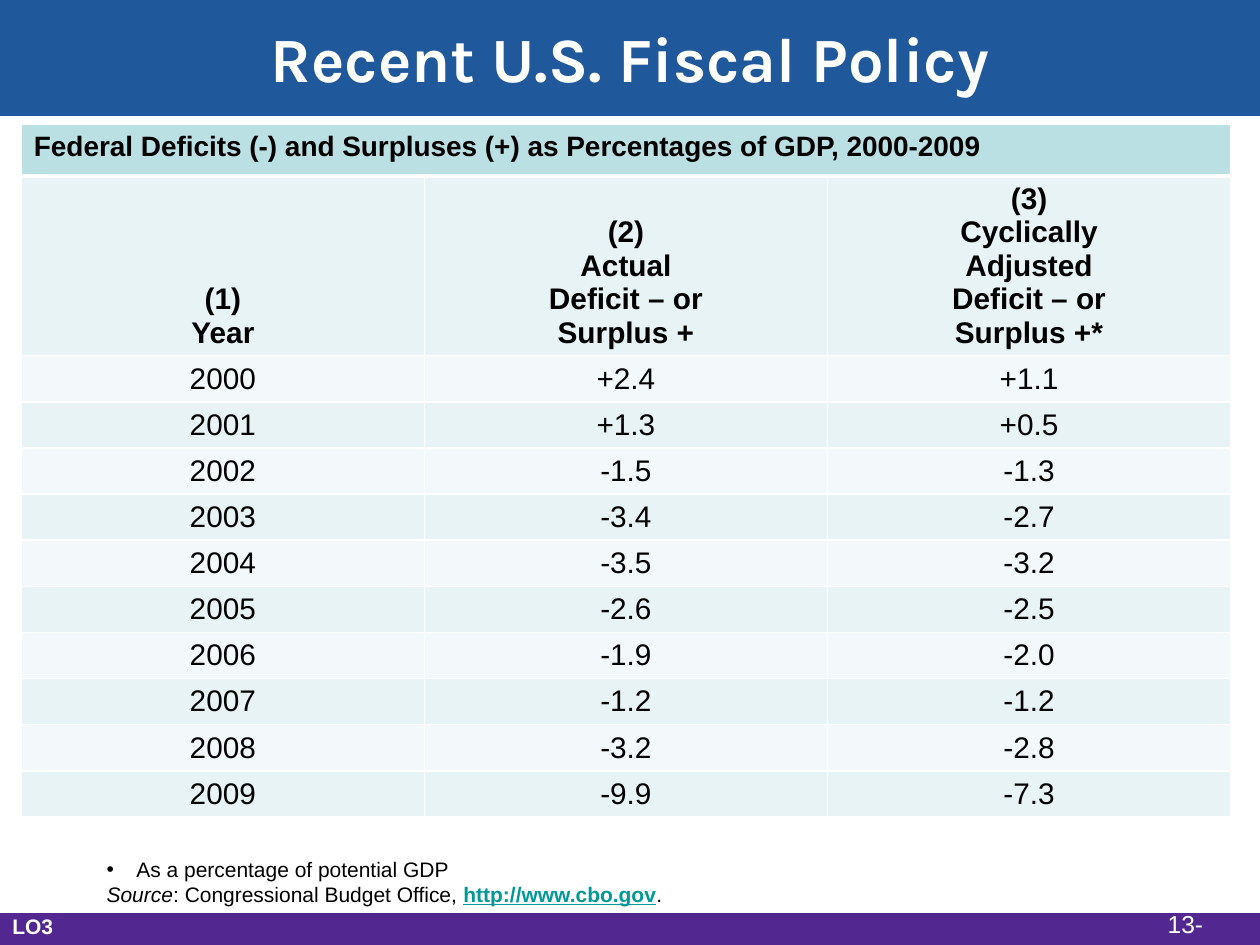
"""Build the slide on recent U.S. fiscal policy with its deficit table."""
import lxml.etree
import pptx
import pptx.dml.color
import pptx.enum.shapes
import pptx.enum.text
import pptx.oxml.ns
import pptx.util
from pptx.util import Cm

COLORS = {"blue": "20589C", "purple": "522890", "heading": "BBE0E3", "odd": "E7F3F4",
          "even": "F3F9FA", "black": "000000", "white": "FFFFFF", "link": "009999"}
ALIGN = pptx.enum.text.PP_ALIGN
ANCHOR = pptx.enum.text.MSO_ANCHOR

CAPTION = "Federal Deficits (-) and Surpluses (+) as Percentages of GDP, 2000-2009"
HEADERS = ["(1)\nYear", "(2)\nActual\nDeficit – or\nSurplus +",
           "(3)\nCyclically\nAdjusted\nDeficit – or\nSurplus +*"]
BALANCES = [("2000", "+2.4", "+1.1"), ("2001", "+1.3", "+0.5"), ("2002", "-1.5", "-1.3"),
            ("2003", "-3.4", "-2.7"), ("2004", "-3.5", "-3.2"), ("2005", "-2.6", "-2.5"),
            ("2006", "-1.9", "-2.0"), ("2007", "-1.2", "-1.2"), ("2008", "-3.2", "-2.8"),
            ("2009", "-9.9", "-7.3")]


def color(name):
    return pptx.dml.color.RGBColor.from_string(COLORS[name])


def add_element(parent, tag, **attributes):
    return lxml.etree.SubElement(parent, pptx.oxml.ns.qn(tag), **attributes)


def write(para, text, size=12, ink="black", font="Arial", bold=False, italic=False,
          underline=False, align=ALIGN.LEFT):
    para.alignment = align
    span = para.add_run()
    span.text = text
    span.font.size = pptx.util.Pt(size)
    span.font.name = font
    span.font.bold = bold
    span.font.italic = italic
    span.font.underline = underline
    span.font.color.rgb = color(ink)


def add_band(page, top, height, fill):
    band = page.shapes.add_shape(pptx.enum.shapes.MSO_SHAPE.RECTANGLE,
                                 0, top, Cm(25.4), height)
    band.shadow.inherit = False
    band.fill.solid()
    band.fill.fore_color.rgb = color(fill)
    band.line.color.rgb = color(fill)
    band.line.width = pptx.util.Pt(0.75)
    return band


def add_title(page, text):
    band = add_band(page, 0, Cm(2.33), "blue")
    title = page.shapes.title
    title.left, title.top, title.width, title.height = 0, 0, Cm(25.4), Cm(2.33)
    title.text_frame.vertical_anchor = ANCHOR.MIDDLE
    write(title.text_frame.paragraphs[0], text, size=36, ink="white", font="Karla",
          bold=True, align=ALIGN.CENTER)
    band.element.addnext(title.element)


def add_box(page, left, top, width, height):
    box = page.shapes.add_textbox(left, top, width, height)
    box.text_frame.word_wrap = True
    return box.text_frame


def set_borders(cell, **widths):
    properties = cell._tc.get_or_add_tcPr()
    for position, side in enumerate("LRTB"):
        width = pptx.util.Pt(widths.get(side, 1))
        line = lxml.etree.Element(pptx.oxml.ns.qn(f"a:ln{side}"), w=str(width))
        fill = add_element(line, "a:solidFill")
        add_element(fill, "a:srgbClr", val=COLORS["white"])
        properties.insert(position, line)


def format_cell(cell, fill, anchor=ANCHOR.TOP, **borders):
    cell.vertical_anchor = anchor
    cell.fill.solid()
    cell.fill.fore_color.rgb = color(fill)
    set_borders(cell, **borders)


def write_cell(cell, text, **style):
    frame = cell.text_frame
    for index, line in enumerate(text.split("\n")):
        para = frame.add_paragraph() if index else frame.paragraphs[0]
        write(para, line, size=17, align=ALIGN.CENTER, **style)


def add_balance_table(page):
    heights = [Cm(1.04), Cm(3.58)] + [Cm(0.93)] * len(BALANCES)
    table = page.shapes.add_table(len(heights), len(HEADERS), Cm(0.43), Cm(2.51),
                                  Cm(24.38), sum(heights)).table
    for row, height in zip(table.rows, heights):
        row.height = height
    table.cell(0, 0).merge(table.cell(0, 2))
    write(table.cell(0, 0).text_frame.paragraphs[0], CAPTION, size=16, bold=True)
    for column, header in enumerate(HEADERS):
        format_cell(table.cell(0, column), "heading", B=3)
        format_cell(table.cell(1, column), "odd", anchor=ANCHOR.BOTTOM, T=3)
        write_cell(table.cell(1, column), header, bold=True)
    for row, values in enumerate(BALANCES, start=2):
        for column, value in enumerate(values):
            format_cell(table.cell(row, column), "odd" if row % 2 else "even")
            write_cell(table.cell(row, column), value)


def add_source_notes(page):
    frame = add_box(page, Cm(1.9), Cm(17.14), Cm(15.75), Cm(1.27))
    bullet = frame.paragraphs[0]
    write(bullet, "As a percentage of potential GDP")
    properties = bullet._p.get_or_add_pPr()
    properties.set("marL", str(Cm(0.6)))
    properties.set("indent", str(-Cm(0.6)))
    add_element(properties, "a:buFont", typeface="Arial")
    add_element(properties, "a:buChar", char="•")
    source = frame.add_paragraph()
    write(source, "Source", italic=True)
    write(source, ": Congressional Budget Office, ")
    write(source, "http://www.cbo.gov", ink="link", bold=True, underline=True)
    write(source, ".")


def add_footer(page):
    add_band(page, Cm(18.41), Cm(0.64), "purple")
    objective = add_box(page, 0, Cm(18.29), Cm(1.47), Cm(0.76))
    write(objective.paragraphs[0], "LO3", ink="white", bold=True)
    chapter = add_box(page, Cm(23.29), Cm(18.21), Cm(1.5), Cm(0.84))
    write(chapter.paragraphs[0], "13-", size=14, ink="white")


def main():
    deck = pptx.Presentation()
    deck.slide_width, deck.slide_height = Cm(25.4), Cm(19.05)
    page = deck.slides.add_slide(deck.slide_layouts.get_by_name("Title Only"))
    add_title(page, "Recent U.S. Fiscal Policy")
    add_balance_table(page)
    add_source_notes(page)
    add_footer(page)
    deck.save("out.pptx")


if __name__ == "__main__":
    main()
